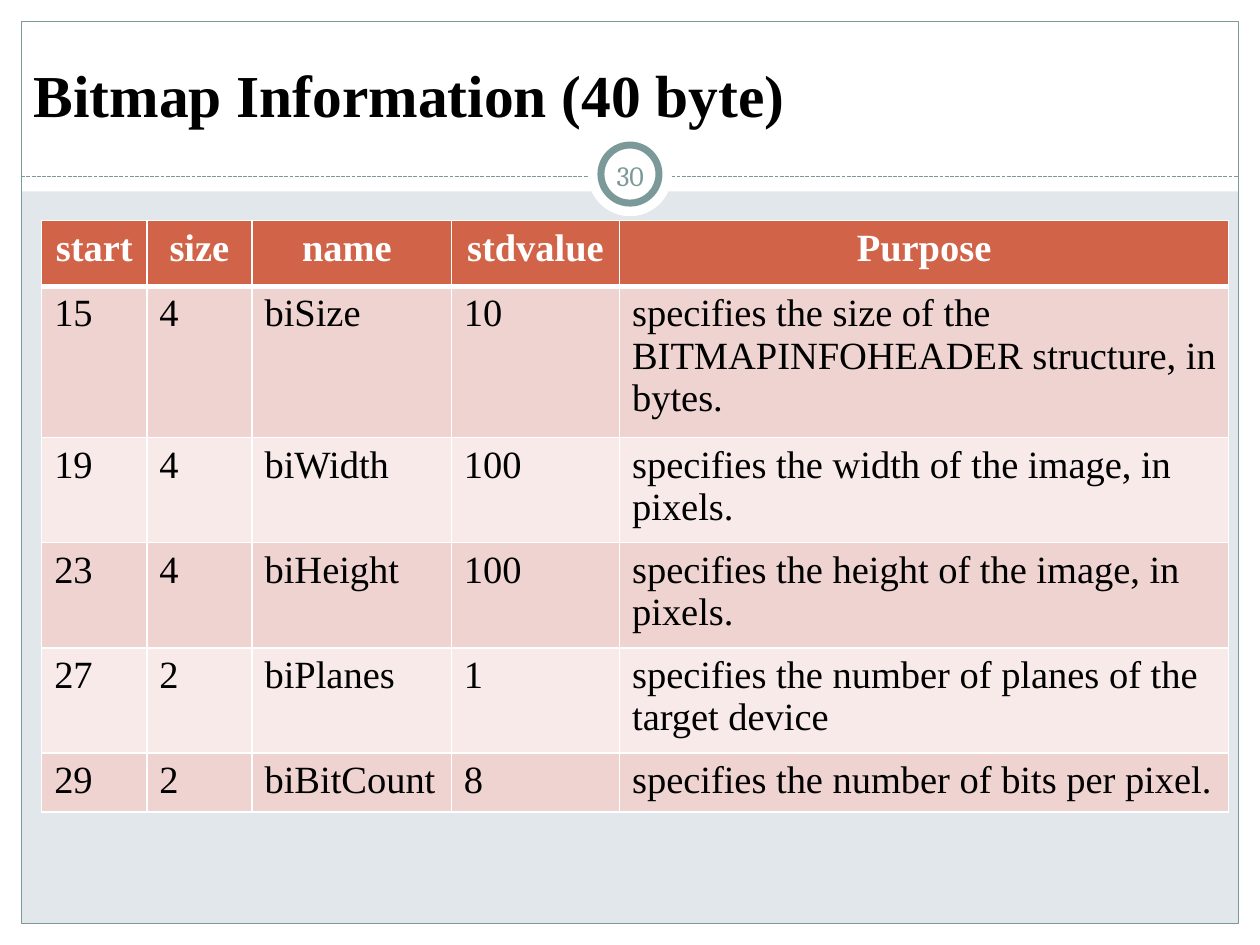
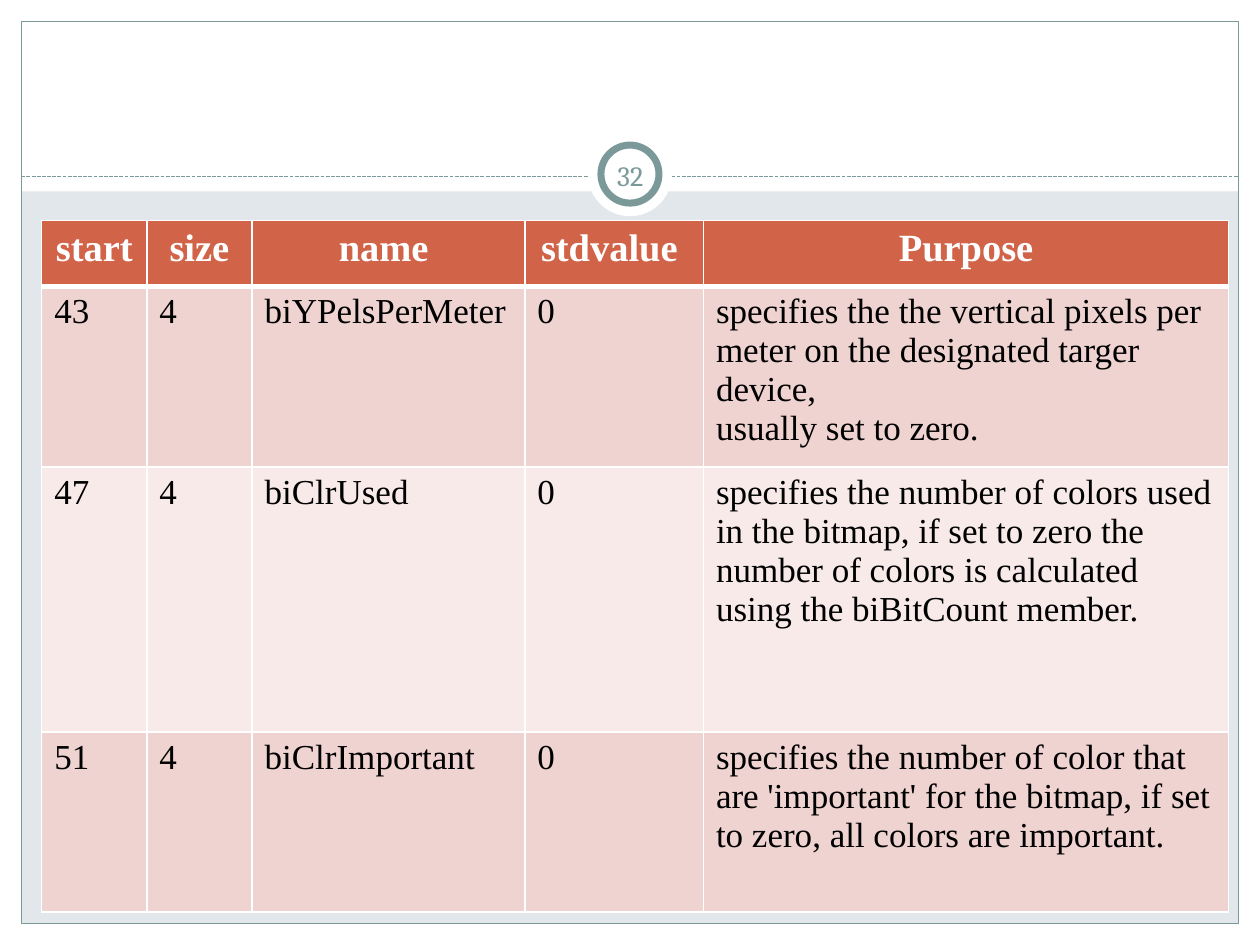
from lxml import etree
from pptx import Presentation
from pptx.dml.color import RGBColor
from pptx.enum import dml, shapes, text
from pptx.oxml import ns
from pptx.util import Cm, Pt

WHITE = RGBColor(0xFF, 0xFF, 0xFF)
BLACK = RGBColor(0x00, 0x00, 0x00)
TEAL = RGBColor(0x7C, 0x99, 0x9A)
BACKGROUND = RGBColor(0xE1, 0xE7, 0xEA)
HEADER_FILL = RGBColor(0xD1, 0x63, 0x49)
ROW_FILLS = (RGBColor(0xEE, 0xD3, 0xD0), RGBColor(0xF7, 0xEA, 0xE9))

BODY_FONT = "Times New Roman"
NUMBER_FONT = "Cambria"

WIDTH, HEIGHT = 25.4, 19.05
MARGIN = 0.43
BAND_HEIGHT = 3.86
DIVIDER_TOP = 3.56
BADGE_CENTER = (WIDTH / 2, 3.51)
TABLE_LEFT, TABLE_TOP = 0.84, 4.45
HEADER_HEIGHT = 1.32

HEADINGS = ("start", "size", "name ", "stdvalue ", "Purpose")
FIELDS_15_TO_29 = (
    ("15", "4", "biSize", "10",
     "specifies the size of the\nBITMAPINFOHEADER structure, in bytes."),
    ("19", "4", "biWidth", "100", "specifies the width of the image, in\npixels."),
    ("23", "4", "biHeight", "100", "specifies the height of the image, in\npixels."),
    ("27", "2", "biPlanes", "1", "specifies the number of planes of the target device"),
    ("29", "2", "biBitCount", "8", "specifies the number of bits per pixel."),
)
FIELDS_43_TO_51 = (
    ("43", "4", "biYPelsPerMeter", "0",
     "specifies the the vertical pixels per\n"
     "meter on the designated targer device,\nusually set to zero."),
    ("47", "4", "biClrUsed", "0",
     "specifies the number of colors used in the bitmap, if set to zero the "
     "number of colors is calculated using the biBitCount member."),
    ("51", "4", "biClrImportant", "0",
     "specifies the number of color that are 'important' for the bitmap, "
     "if set to zero, all colors are important."),
)


def write_text(frame, content, size, color=BLACK, font=BODY_FONT, bold=False,
               align=text.PP_ALIGN.LEFT):
    """Fill a text frame, one paragraph for each line of content."""
    frame.word_wrap = True
    frame.text = content
    for paragraph in frame.paragraphs:
        paragraph.alignment = align
        for run in paragraph.runs:
            run.font.name = font
            run.font.size = Pt(size)
            run.font.bold = bold
            run.font.color.rgb = color


def add_shape(slide, kind, left, top, width, height, fill=None, line_width=None):
    shape = slide.shapes.add_shape(kind, Cm(left), Cm(top), Cm(width), Cm(height))
    shape.shadow.inherit = False
    if fill is None:
        shape.fill.background()
    else:
        shape.fill.solid()
        shape.fill.fore_color.rgb = fill
    if line_width is None:
        shape.line.fill.background()
    else:
        shape.line.color.rgb = TEAL
        shape.line.width = Pt(line_width)


def add_disc(slide, diameter, line_width=None):
    """Add a white circle around the centre of the page badge."""
    left, top = (center - diameter / 2 for center in BADGE_CENTER)
    add_shape(slide, shapes.MSO_SHAPE.OVAL, left, top, diameter, diameter,
              WHITE, line_width)


def add_divider(slide):
    divider = slide.shapes.add_connector(
        shapes.MSO_CONNECTOR.STRAIGHT, Cm(MARGIN), Cm(DIVIDER_TOP),
        Cm(WIDTH - MARGIN), Cm(DIVIDER_TOP))
    divider.line.color.rgb = TEAL
    divider.line.width = Pt(0.75)
    divider.line.dash_style = dml.MSO_LINE.SQUARE_DOT
    etree.SubElement(divider._element.spPr, ns.qn("a:effectLst"))


def add_text_box(slide, left, top, width, height, content, anchor,
                 inset=None, **text_format):
    frame = slide.shapes.add_textbox(
        Cm(left), Cm(top), Cm(width), Cm(height)).text_frame
    frame.vertical_anchor = anchor
    if inset is not None:
        frame.margin_left = frame.margin_right = Cm(inset)
    write_text(frame, content, **text_format)


def set_borders(cell, **widths):
    """Give a cell white borders, with widths in points by side."""
    properties = cell._tc.get_or_add_tcPr()
    for side in "LRTB":
        border = etree.SubElement(properties, ns.qn(f"a:ln{side}"),
                                  w=str(Pt(widths.get(side, 1))))
        fill = etree.SubElement(border, ns.qn("a:solidFill"))
        etree.SubElement(fill, ns.qn("a:srgbClr"), val=str(WHITE))


def fill_cell(cell, content, fill, borders, **text_format):
    set_borders(cell, **borders)
    cell.fill.solid()
    cell.fill.fore_color.rgb = fill
    write_text(cell.text_frame, content, **text_format)


def add_field_table(slide, fields, column_widths, row_heights, size):
    heights = (HEADER_HEIGHT, *row_heights)
    table = slide.shapes.add_table(
        len(heights), len(column_widths), Cm(TABLE_LEFT), Cm(TABLE_TOP),
        Cm(sum(column_widths)), Cm(sum(heights))).table
    for column, width in zip(table.columns, column_widths):
        column.width = Cm(width)
    for row, height in zip(table.rows, heights):
        row.height = Cm(height)
    for column, heading in enumerate(HEADINGS):
        fill_cell(table.cell(0, column), heading, HEADER_FILL, {"B": 3}, size=22,
                  color=WHITE, bold=True, align=text.PP_ALIGN.CENTER)
    for row, field in enumerate(fields, start=1):
        borders = {"T": 3} if row == 1 else {}
        for column, content in enumerate(field):
            fill_cell(table.cell(row, column), content, ROW_FILLS[(row - 1) % 2],
                      borders, size=size)


def add_framed_slide(presentation, number, title=None):
    """Add a slide with the shared frame, page badge and optional title."""
    slide = presentation.slides.add_slide(presentation.slide_layouts[6])
    slide.background.fill.solid()
    slide.background.fill.fore_color.rgb = BACKGROUND
    rectangle = shapes.MSO_SHAPE.RECTANGLE
    for edge in ((0, HEIGHT - MARGIN, WIDTH, MARGIN),
                 (0, 0, WIDTH, BAND_HEIGHT),
                 (0, 0, MARGIN, HEIGHT),
                 (WIDTH - MARGIN, 0, MARGIN, HEIGHT)):
        add_shape(slide, rectangle, *edge, fill=WHITE)
    add_shape(slide, rectangle, MARGIN, MARGIN, WIDTH - 2 * MARGIN,
              HEIGHT - 2 * MARGIN, line_width=0.75)
    add_divider(slide)
    add_disc(slide, 1.7)
    add_disc(slide, 1.17, line_width=4)
    if title:
        add_text_box(slide, MARGIN, MARGIN, WIDTH - 2 * MARGIN, 2.31, title,
                     text.MSO_ANCHOR.BOTTOM, size=34, bold=True)
    add_text_box(slide, 12.07, 2.92, 1.27, 1.22, str(number),
                 text.MSO_ANCHOR.MIDDLE, inset=0.13, size=16, color=TEAL,
                 font=NUMBER_FONT, align=text.PP_ALIGN.CENTER)
    return slide


def main():
    presentation = Presentation()
    presentation.slide_width = Cm(WIDTH)
    presentation.slide_height = Cm(HEIGHT)

    slide = add_framed_slide(presentation, 30, "Bitmap Information (40 byte)")
    add_field_table(slide, FIELDS_15_TO_29, (2.12, 2.12, 4.02, 3.39, 12.28),
                    (3.05, 2.12, 2.12, 2.12, 1.19), size=22)

    slide = add_framed_slide(presentation, 32)
    add_field_table(slide, FIELDS_43_TO_51, (2.12, 2.12, 5.5, 3.6, 10.59),
                    (3.63, 5.34, 3.63), size=20)

    presentation.save("out.pptx")


if __name__ == "__main__":
    main()
